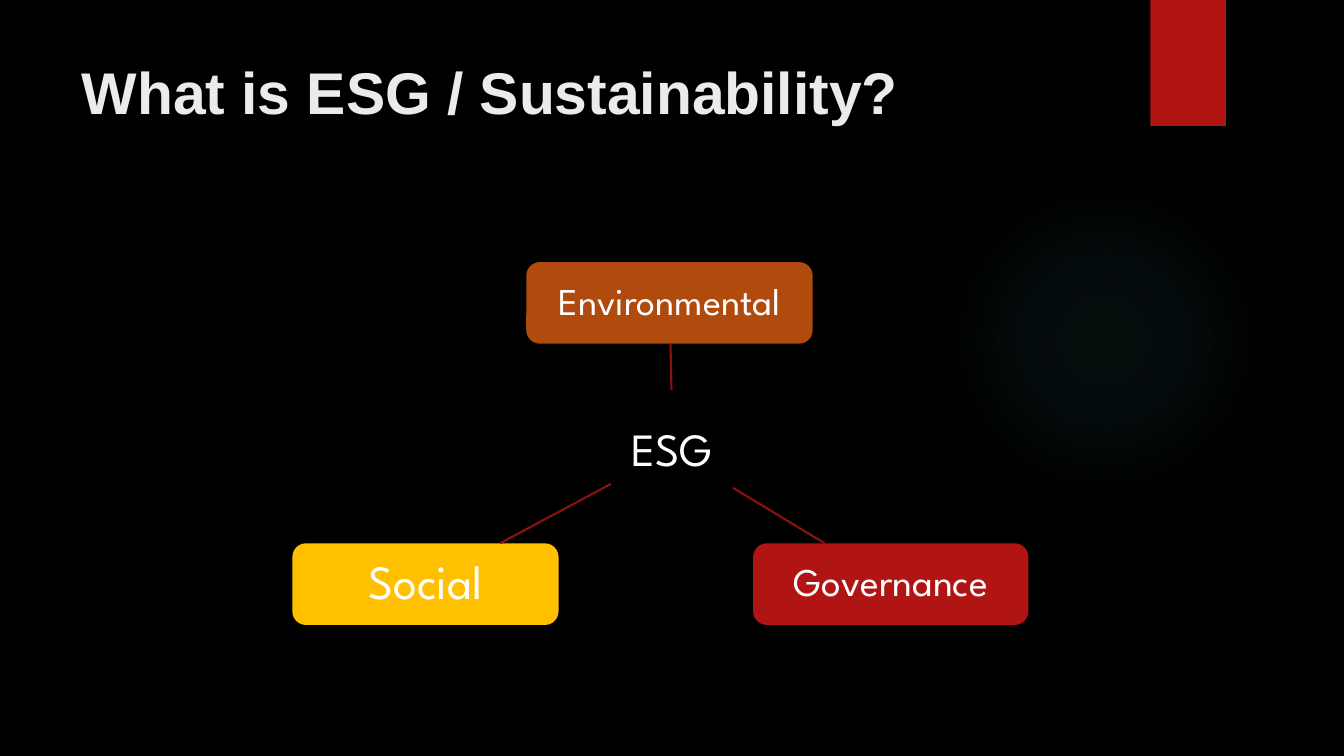
from lxml import etree
from pptx import Presentation
from pptx.dml.color import RGBColor
from pptx.enum import shapes, text
from pptx.oxml import parse_xml
from pptx.oxml.ns import nsdecls, qn
from pptx.util import Inches, Pt

HUES = {"black": "000000", "white": "FFFFFF", "title": "EBEBEB", "red": "B01513",
        "rust": "B04A0D", "gold": "FFC000", "line": "8D110F", "glow": "50B9C1"}
TITLE = "What is ESG / Sustainability?"
NODES = [
    ("ESG", 33, "black", (6.06, 3.87, 1.21, 1.21)),
    ("Environmental", 27, "rust", (5.22, 2.6, 2.84, 0.81)),
    ("Governance", 28, "red", (7.47, 5.39, 2.73, 0.81)),
    ("Social", 34, "gold", (2.9, 5.39, 2.64, 0.81)),
]
LINKS = [(6.66, 3.87, 6.65, 3.41), (7.27, 4.84, 8.18, 5.39), (6.06, 4.8, 4.96, 5.39)]
STOPS = [(0, 7), (36, 6), (69, 0)]
PAD = 0.08
KIND = shapes.MSO_SHAPE


def hue(name):
    return RGBColor.from_string(HUES[name])


def add_box(slide, kind, place, fill):
    box = slide.shapes.add_shape(kind, *map(Inches, place))
    box.shadow.inherit = False
    box.fill.solid()
    box.fill.fore_color.rgb = hue(fill)
    box.line.fill.background()
    return box


def add_glow(slide):
    glow = add_box(slide, KIND.OVAL, (9.41, 1.83, 3.08, 3.08), "glow")
    stops = "".join(
        f'<a:gs pos="{pos * 1000}"><a:srgbClr val="{HUES["glow"]}">'
        f'<a:alpha val="{alpha * 1000}"/></a:srgbClr></a:gs>' for pos, alpha in STOPS)
    grad = parse_xml(
        f'<a:gradFill {nsdecls("a")} rotWithShape="1"><a:gsLst>{stops}</a:gsLst>'
        '<a:path path="circle"><a:fillToRect l="50000" t="50000" r="50000" b="50000"/>'
        '</a:path></a:gradFill>')
    props = glow.element.spPr
    props.replace(props.find(qn("a:solidFill")), grad)


def add_node(slide, label, size, fill, place):
    frame = add_box(slide, KIND.ROUNDED_RECTANGLE, place, fill).text_frame
    frame.margin_left = frame.margin_right = Inches(PAD)
    frame.margin_top = frame.margin_bottom = Inches(PAD)
    frame.vertical_anchor = text.MSO_ANCHOR.MIDDLE
    para = frame.paragraphs[0]
    para.text = label
    para.alignment = text.PP_ALIGN.CENTER
    para.line_spacing = 0.9
    para.font.name = "League Spartan"
    para.font.size = Pt(size)
    para.font.color.rgb = hue("white")


def add_link(slide, ends):
    link = slide.shapes.add_connector(shapes.MSO_CONNECTOR.STRAIGHT, *map(Inches, ends))
    link.line.color.rgb = hue("line")
    link.line.width = Pt(1.5)
    etree.SubElement(link.element.spPr, qn("a:effectLst"))


def set_title(slide):
    title = slide.shapes.title
    title.left, title.top, title.width, title.height = map(Inches, (0.71, 0.5, 10.29, 1.53))
    frame = title.text_frame
    frame.vertical_anchor = text.MSO_ANCHOR.TOP
    para = frame.paragraphs[0]
    para.text = TITLE
    para.alignment = text.PP_ALIGN.LEFT
    para.font.name = "Arial"
    para.font.size = Pt(42)
    para.font.bold = True
    para.font.color.rgb = hue("title")


def main():
    deck = Presentation()
    deck.slide_width, deck.slide_height = Inches(13.33), Inches(7.5)
    slide = deck.slides.add_slide(deck.slide_layouts[5])
    slide.background.fill.solid()
    slide.background.fill.fore_color.rgb = hue("black")
    add_glow(slide)
    add_box(slide, KIND.RECTANGLE, (11.41, 0, 0.75, 1.25), "red")
    set_title(slide)
    for node in NODES:
        add_node(slide, *node)
    for ends in LINKS:
        add_link(slide, ends)
    deck.save("out.pptx")


if __name__ == "__main__":
    main()
